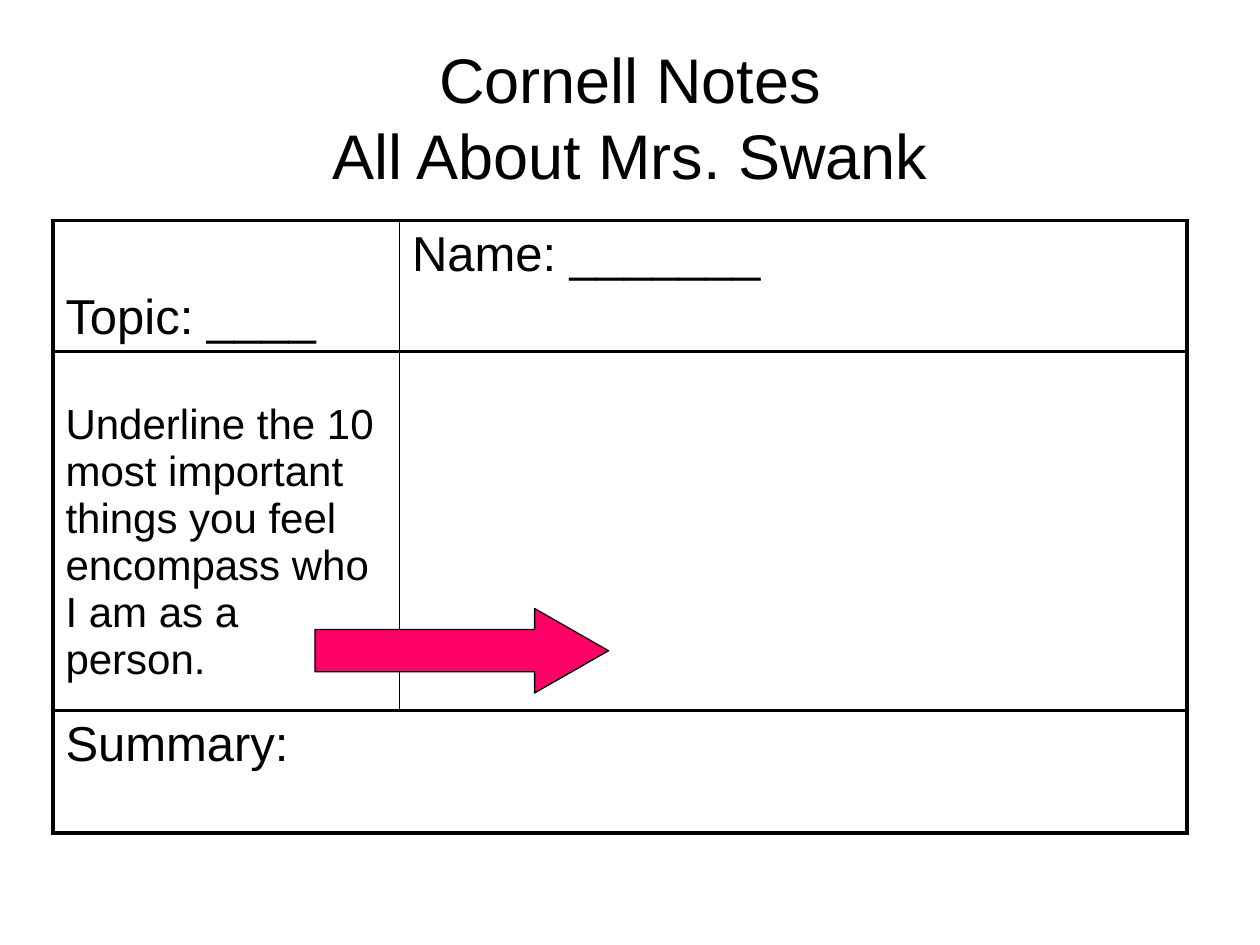
from lxml import etree
from pptx import Presentation
from pptx.dml.color import RGBColor
from pptx.enum.shapes import MSO_SHAPE as Shape
from pptx.enum.text import MSO_ANCHOR as Anchor, PP_ALIGN as Align
from pptx.oxml.ns import qn
from pptx.util import Inches, Pt


def rgb(value):
    return RGBColor.from_string(value)


class NotesSlide:
    font = "Arial"
    ink = "000000"
    thick, thin = 2.25, 1

    def __init__(self, presentation):
        self.slide = presentation.slides.add_slide(presentation.slide_layouts[6])

    def set_text(self, text_frame, text, size, align=Align.LEFT):
        text_frame.text = text
        for paragraph in text_frame.paragraphs:
            paragraph.alignment = align
            for run in paragraph.runs:
                run.font.name = self.font
                run.font.size = Pt(size)
                run.font.bold = False
                run.font.color.rgb = rgb(self.ink)

    def title(self, text, left, top, width, height):
        box = self.slide.shapes.add_textbox(
            Inches(left), Inches(top), Inches(width), Inches(height))
        box.text_frame.word_wrap = True
        box.text_frame.vertical_anchor = Anchor.MIDDLE
        self.set_text(box.text_frame, text, 36, Align.CENTER)

    def table(self, left, top, widths, heights):
        table = self.slide.shapes.add_table(
            len(heights), len(widths), Inches(left), Inches(top),
            Inches(sum(widths)), Inches(sum(heights))).table
        table.first_row = table.horz_banding = False
        for column, width in zip(table.columns, widths):
            column.width = Inches(width)
        for row, height in zip(table.rows, heights):
            row.height = Inches(height)
        return table

    def borders(self, cell, left, right):
        properties = cell._tc.get_or_add_tcPr()
        sides = {"L": left, "R": right, "T": self.thick, "B": self.thick}
        for position, (side, width) in enumerate(sides.items()):
            line = etree.Element(qn(f"a:ln{side}"), w=str(Pt(width)))
            fill = etree.SubElement(line, qn("a:solidFill"))
            etree.SubElement(fill, qn("a:srgbClr"), val=self.ink)
            properties.insert(position, line)

    def cell(self, cell, text, size, anchor=Anchor.TOP, margin_top=0.05):
        cell.fill.background()
        cell.vertical_anchor = anchor
        cell.margin_top = Inches(margin_top)
        self.set_text(cell.text_frame, text, size)

    def arrow(self, left, top, width, height, color):
        shape = self.slide.shapes.add_shape(
            Shape.RIGHT_ARROW, Inches(left), Inches(top),
            Inches(width), Inches(height))
        shape.adjustments[0] = 0.5
        shape.adjustments[1] = 0.875
        shape.shadow.inherit = False
        shape.fill.solid()
        shape.fill.fore_color.rgb = rgb(color)
        shape.line.color.rgb = rgb(self.ink)
        shape.line.width = Pt(0.75)


def main():
    presentation = Presentation()
    presentation.slide_width = Inches(10)
    presentation.slide_height = Inches(7.5)
    notes = NotesSlide(presentation)

    # Heading
    notes.title("Cornell Notes\nAll About Mrs. Swank", 0.5, 0.3, 9, 1.25)

    # Note-taking grid, with the summary across the full width
    table = notes.table(0.42, 1.75, [2.75, 6.25], [1.04, 2.79, 0.97])
    table.cell(2, 0).merge(table.cell(2, 1))
    notes.cell(table.cell(0, 0), "Topic: ____", 28, Anchor.BOTTOM)
    notes.cell(table.cell(0, 1), "Name: _______", 28)
    notes.cell(table.cell(1, 0), "Underline the 10 most important things you feel "
               "encompass who I am as a person.", 24, margin_top=0.4)
    notes.cell(table.cell(1, 1), "", 28)
    notes.cell(table.cell(2, 0), "Summary:", 28)

    # Heavy frame and row lines, light column divider
    for row in range(2):
        notes.borders(table.cell(row, 0), notes.thick, notes.thin)
        notes.borders(table.cell(row, 1), notes.thin, notes.thick)
    for column in range(2):
        notes.borders(table.cell(2, column), notes.thick, notes.thick)

    # Pointer to the notes area
    notes.arrow(2.5, 4.83, 2.33, 0.67, "FF0066")

    presentation.save("out.pptx")


if __name__ == "__main__":
    main()
